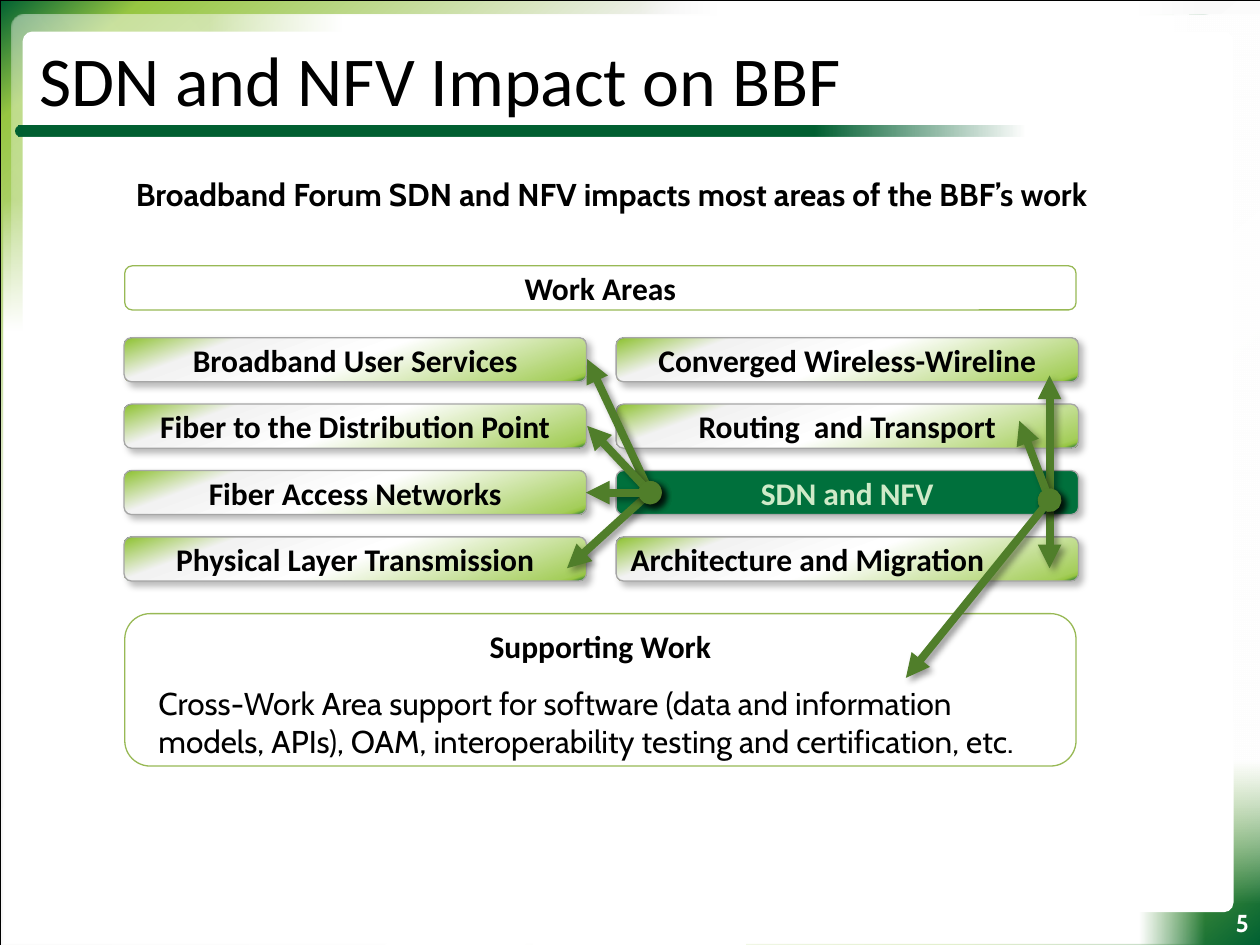
from dataclasses import dataclass

from lxml import etree
from pptx import Presentation
from pptx.dml.color import RGBColor
from pptx.enum.shapes import MSO_CONNECTOR, MSO_SHAPE
from pptx.enum.text import MSO_ANCHOR, MSO_AUTO_SIZE, PP_ALIGN
from pptx.oxml.ns import qn
from pptx.util import Inches, Pt

RECT, ROUND, OVAL = MSO_SHAPE.RECTANGLE, MSO_SHAPE.ROUNDED_RECTANGLE, MSO_SHAPE.OVAL
STRAIGHT = MSO_CONNECTOR.STRAIGHT
LEFT, CENTER, RIGHT = PP_ALIGN.LEFT, PP_ALIGN.CENTER, PP_ALIGN.RIGHT
TOP, MIDDLE = MSO_ANCHOR.TOP, MSO_ANCHOR.MIDDLE
NO_FIT = MSO_AUTO_SIZE.NONE


@dataclass(frozen=True)
class Theme:
    heading_font: str = "Calibri"
    body_font: str = "Cabin"
    title_size: int = 40
    text_size: int = 18
    number_size: int = 14
    text: str = "000000"
    white: str = "FFFFFF"
    pale: str = "F2F2F2"
    deep: str = "006032"
    lime: str = "97C642"
    light_lime: str = "A5CE5B"
    focus: str = "00703C"
    focus_text: str = "CFEAC8"
    box_line: str = "A6A6A6"
    outline: str = "98B955"
    arrow: str = "507E2A"


class SlideBuilder:
    def __init__(self, slide, theme):
        self.slide, self.theme = slide, theme

    def gradient(self, shape, stops, angle):
        """Stops are (position %, colour) or (position %, colour, opacity %)."""
        fill = etree.Element(qn("a:gradFill"), rotWithShape="1")
        stop_list = etree.SubElement(fill, qn("a:gsLst"))
        for position, color, *opacity in stops:
            stop = etree.SubElement(stop_list, qn("a:gs"), pos=str(position * 1000))
            tone = etree.SubElement(stop, qn("a:srgbClr"), val=color)
            if opacity:
                etree.SubElement(tone, qn("a:alpha"), val=str(opacity[0] * 1000))
        etree.SubElement(fill, qn("a:lin"), ang=str(angle * 60000), scaled="0")
        shape._element.spPr.find(qn("a:prstGeom")).addnext(fill)

    def shadow(self, shape, opacity=None):
        effects = etree.SubElement(shape._element.spPr, qn("a:effectLst"))
        if opacity:
            cast = etree.SubElement(effects, qn("a:outerShdw"), blurRad=str(Pt(4)),
                                    dist=str(Pt(3)), dir="2700000", rotWithShape="0")
            tone = etree.SubElement(cast, qn("a:srgbClr"), val=self.theme.text)
            etree.SubElement(tone, qn("a:alpha"), val=str(opacity * 1000))

    def shape(self, kind, at, fill=None, angle=0, line=None, width=0.75,
              corner=None, shadow=None):
        shape = self.slide.shapes.add_shape(kind, *map(Inches, at))
        if corner is not None:
            shape.adjustments[0] = corner
        if fill is None:
            shape.fill.background()
        elif isinstance(fill, str):
            shape.fill.solid()
            shape.fill.fore_color.rgb = RGBColor.from_string(fill)
        else:
            self.gradient(shape, fill, angle)
        if line:
            shape.line.color.rgb = RGBColor.from_string(line)
            shape.line.width = Pt(width)
        else:
            shape.line.fill.background()
        self.shadow(shape, shadow)
        return shape

    def set_text(self, shape, text, font, size=None, color=None, bold=False,
                 align=LEFT, anchor=TOP, insets=(0.1, 0.05), wrap=True):
        frame = shape.text_frame
        frame.text = text
        frame.word_wrap = wrap
        frame.auto_size = NO_FIT
        frame.vertical_anchor = anchor
        frame.margin_left = frame.margin_right = Inches(insets[0])
        frame.margin_top = frame.margin_bottom = Inches(insets[1])
        paragraph = frame.paragraphs[0]
        paragraph.alignment = align
        style = paragraph.runs[0].font
        style.name, style.bold = font, bold
        style.size = Pt(size or self.theme.text_size)
        style.color.rgb = RGBColor.from_string(color or self.theme.text)

    def title(self, text, at):
        title = self.slide.shapes.title
        title.left, title.top, title.width, title.height = map(Inches, at)
        self.set_text(title, text, self.theme.heading_font, self.theme.title_size,
                      anchor=MIDDLE, insets=(0.13, 0.07))
        # Bring the title in front of the backdrop
        self.slide.shapes._spTree.append(title._element)

    def label(self, text, at, **style):
        box = self.slide.shapes.add_textbox(*map(Inches, at))
        self.set_text(box, text, self.theme.body_font, **style)

    def box(self, text, at, fill=None, line=None, shadow=None, **style):
        box = self.shape(ROUND, at, fill, 70, line, shadow=shadow)
        self.set_text(box, text, self.theme.heading_font, bold=True, **style)

    def arrow(self, start, end):
        arrow = self.slide.shapes.add_connector(STRAIGHT, *map(Inches, start + end))
        arrow.line.color.rgb = RGBColor.from_string(self.theme.arrow)
        arrow.line.width = Pt(4.5)
        line = arrow.line._get_or_add_ln()
        etree.SubElement(line, qn("a:headEnd"), type="oval")
        etree.SubElement(line, qn("a:tailEnd"), type="triangle")
        self.shadow(arrow, 40)


def draw_backdrop(page):
    t = page.theme
    frame = [(0, t.deep), (6, t.lime), (29, t.pale), (69, t.white), (87, t.lime), (100, t.deep)]
    veil = [(0, t.deep, 48), (6, t.lime, 52), (34, t.pale, 50),
            (62, t.white, 48), (91, t.lime, 51), (100, t.deep, 52)]

    def fade(start, full, end):
        return [(start, t.white, 0), (full, t.white), (end, t.white)]

    # Green frame and the white fades over it
    page.shape(RECT, (0, 0, 10.01, 7.5), frame, 50, line=t.text, width=0.25)
    page.shape(ROUND, (0.09, 0.12, 9.56, 6.44), veil, 140, corner=0.017)
    page.shape(RECT, (1.25, 0.12, 8.18, 6.88), fade(5, 18, 89))
    page.shape(RECT, (0.03, 1, 4.91, 6.5), fade(9, 25, 87), 90)
    page.shape(RECT, (4.83, 0.01, 4.73, 7.49), fade(5, 18, 89) + [(100, t.white, 0)])
    right_fade = page.shape(RECT, (9.32, 0.12, 0.69, 7.12), fade(1, 17, 87), 90)
    right_fade.rotation = 180

    # Slide number
    page.label("5", (9.57, 7.16, 0.44, 0.34), size=t.number_size, color=t.white,
               bold=True, align=RIGHT, wrap=False)

    # Content panel and title rule
    page.shape(ROUND, (0.18, 0.25, 9.61, 6.99), t.white, corner=0.011)
    page.shape(RECT, (4.23, 6.92, 1.69, 0.58), t.white)
    page.shape(OVAL, (0.12, 1, 0.06, 0.08), t.deep)
    page.shape(ROUND, (0.15, 1, 7.98, 0.08), [(0, t.deep, 0), (21, t.deep)], 180, corner=0)


def draw_work_areas(page):
    t = page.theme
    sheen = [(0, t.deep), (2, t.lime), (20, t.pale), (50, t.white),
             (95, t.light_lime), (97, t.lime), (100, t.deep)]
    focus_area, left_aligned = "SDN and NFV", "Architecture and Migration"
    columns = {
        0.985: ["Broadband User Services", "Fiber to the Distribution Point",
                "Fiber Access Networks", "Physical Layer Transmission"],
        4.89: ["Converged Wireless-Wireline", "Routing  and Transport",
               focus_area, left_aligned],
    }
    for left, areas in columns.items():
        for row, area in enumerate(areas):
            focused = area == focus_area
            page.box(area, (left, 2.68 + 0.527 * row, 3.67, 0.35),
                     t.focus if focused else sheen, t.box_line, shadow=28,
                     color=t.focus_text if focused else t.text,
                     align=LEFT if area == left_aligned else CENTER, anchor=MIDDLE,
                     insets=(0.01, 0) if focused else (0.1, 0.05))


def main():
    deck = Presentation()
    deck.slide_width, deck.slide_height = Inches(10), Inches(7.5)
    page = SlideBuilder(deck.slides.add_slide(deck.slide_layouts[5]), Theme())
    outline = page.theme.outline

    # Backdrop, title and texts
    draw_backdrop(page)
    page.title("SDN and NFV Impact on BBF", (0.18, 0.25, 9.18, 0.75))
    page.label("Broadband Forum SDN and NFV impacts most areas of the BBF’s work",
               (0.98, 1.34, 7.77, 0.4), bold=True)
    page.label("Cross-Work Area support for software (data and information models, APIs), "
               "OAM, interoperability testing and certification, etc.", (1.16, 5.38, 7, 0.71))

    # Work areas and supporting work
    draw_work_areas(page)
    page.box("Work Areas", (0.99, 2.11, 7.55, 0.35), line=outline,
             align=CENTER, anchor=MIDDLE, insets=(0, 0.05))
    page.box("Supporting Work", (0.99, 4.87, 7.55, 1.21), line=outline,
             align=CENTER, insets=(0, 0.05))

    # Impacts spreading from SDN and NFV
    impacts = {
        (8.33, 3.97): [(8.33, 4.51), (8.33, 2.98), (8.09, 3.34), (7.19, 5.38)],
        (5.16, 3.91): [(4.5, 4.51), (4.66, 2.85), (4.66, 3.38), (4.65, 3.91)],
    }
    for hub, targets in impacts.items():
        for target in targets:
            page.arrow(hub, target)

    deck.save("out.pptx")


if __name__ == "__main__":
    main()
